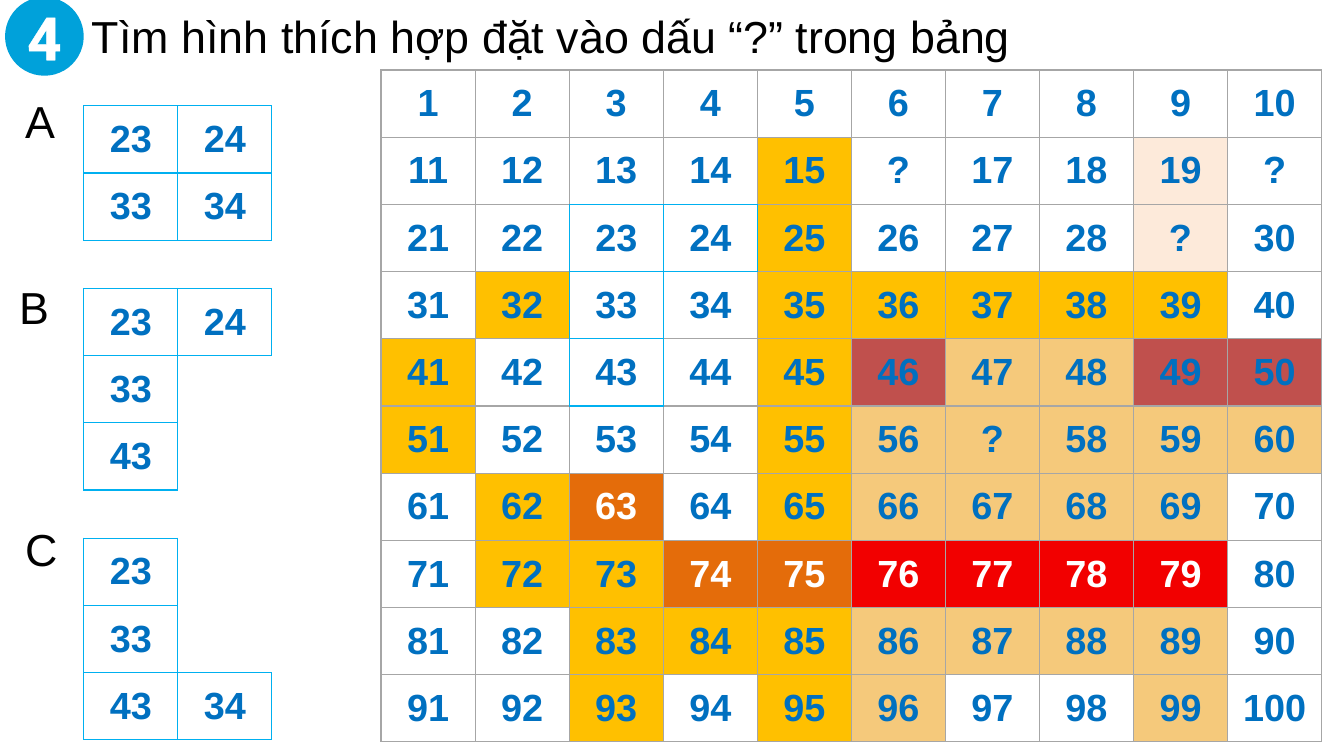
from lxml import etree
from pptx import Presentation
from pptx import util as u
from pptx.dml.color import RGBColor
from pptx.enum import shapes, text
from pptx.oxml import ns

Pt = u.Pt
HUES = {
    "ink": "000000", "white": "FFFFFF", "blue": "0070C0", "badge": "00A1DA",
    "grid": "A6A6A6", "piece": "00B0F0",
    ".": "FFFFFF", "y": "FFC000", "p": "FDEADA", "r": "C0504D",
    "t": "F5C97B", "o": "E46C0A", "f": "F20000",
}
WIDE, HIGH = 67.2, 48
GAPS = {12, 13, 15, 18, 25, 28, 31, 32, 46, 19, 56}
MARKS = {16, 20, 29, 33, 57}
UNDER = {23, 24, 43}
TINTS = [
    "..........", "....y...p.", "....y...p.", ".y..yyyyy.", "y...yrttrr",
    "y...yttttt", ".yo.ytttt.", ".yyooffff.", "..yyytttt.", "..y.yt..t.",
]
SQUARE = ([["23", "24"], ["33", "34"]], ["..", ".."])
HOOK = ([["23", "24"], ["33", ""], ["43", ""]], ["..", ".-", ".-"])
FOOT = ([["23", ""], ["33", ""], ["43", "34"]], [".-", ".-", ".."])


def hue(name):
    return RGBColor.from_string(HUES[name])


def style(para, size, tone, face="Arial", bold=False, align=text.PP_ALIGN.CENTER):
    para.alignment = align
    font = para.font
    font.size, font.name, font.bold = Pt(size), face, bold
    font.color.rgb = hue(tone)


def pad(box):
    box.margin_left = box.margin_right = Pt(9.6)
    box.margin_top = box.margin_bottom = Pt(4.8)
    box.vertical_anchor = text.MSO_ANCHOR.MIDDLE


def write(shape, words):
    frame = shape.text_frame
    frame.word_wrap = True
    frame.auto_size = text.MSO_AUTO_SIZE.NONE
    pad(frame)
    frame.text = words
    style(frame.paragraphs[0], 32, "ink", align=text.PP_ALIGN.JUSTIFY)


def edge(cell, side, tone):
    props = cell._tc.get_or_add_tcPr()
    line = etree.SubElement(props, ns.qn("a:" + side), w=str(Pt(1)))
    if tone:
        fill = etree.SubElement(line, ns.qn("a:solidFill"))
        etree.SubElement(fill, ns.qn("a:srgbClr"), val=HUES[tone])
    else:
        etree.SubElement(line, ns.qn("a:noFill"))


def board(slide, left, top, words, tints, tone):
    rows, cols = len(words), len(words[0])
    table = slide.shapes.add_table(
        rows, cols, Pt(left), Pt(top), Pt(WIDE * cols), Pt(HIGH * rows)).table
    table.first_row = table.horz_banding = False
    for col in table.columns:
        col.width = Pt(WIDE)
    for row in table.rows:
        row.height = Pt(HIGH)

    def full(r, c):
        return 0 <= r < rows and 0 <= c < cols and words[r][c] != ""

    for r in range(rows):
        for c in range(cols):
            cell, tint = table.cell(r, c), tints[r][c]
            pad(cell)
            cell.text = words[r][c]
            style(cell.text_frame.paragraphs[0], 27,
                  "white" if tint in "of" else "blue", bold=True)
            for side, down, over in (("lnL", 0, -1), ("lnR", 0, 1),
                                     ("lnT", -1, 0), ("lnB", 1, 0)):
                drawn = full(r, c) or full(r + down, c + over)
                edge(cell, side, tone if drawn else None)
            if tint == "-":
                cell.fill.background()
            else:
                cell.fill.solid()
                cell.fill.fore_color.rgb = hue(tint)


def header(slide, left, top):
    title = slide.shapes.title
    title.left, title.top = Pt(left + 52.5), Pt(top - 17.3)
    title.width, title.height = Pt(828), Pt(90)
    write(title, "Tìm hình thích hợp đặt vào dấu “?” trong bảng")
    badge = slide.shapes.add_shape(
        shapes.MSO_SHAPE.OVAL, Pt(left), Pt(top), Pt(56.2), Pt(56.2))
    badge.shadow.inherit = False
    badge.fill.solid()
    badge.fill.fore_color.rgb = hue("badge")
    badge.line.fill.background()
    frame = badge.text_frame
    frame.vertical_anchor = text.MSO_ANCHOR.MIDDLE
    para = frame.paragraphs[0]
    run = para.add_run()
    run.text = "4"
    style(para, 42.7, "white", "Roboto", True)
    line = etree.SubElement(run._r.get_or_add_rPr(), ns.qn("a:ln"), w=str(Pt(1.45)))
    fill = etree.SubElement(line, ns.qn("a:solidFill"))
    etree.SubElement(fill, ns.qn("a:srgbClr"), val=HUES["white"])


def entry(num):
    if num in UNDER:
        return ""
    return "?" if num in MARKS else str(num)


def chart(slide, left, top):
    words = [[entry(10 * r + c + 1) for c in range(10)] for r in range(10)]
    board(slide, left, top, words, TINTS, "grid")
    board(slide, left + 2 * WIDE, top + 2 * HIGH, *HOOK, "piece")


def choice(slide, left, top, name, shift, lift, piece):
    board(slide, left, top, *piece, "piece")
    label = slide.shapes.add_textbox(
        Pt(left - shift), Pt(top - lift), Pt(67.7), Pt(90))
    write(label, name)


def main():
    deck = Presentation()
    deck.slide_width, deck.slide_height = Pt(960), Pt(540)
    slide = deck.slides.add_slide(deck.slide_layouts[5])
    header(slide, 3.6, -2.1)
    chart(slide, 272.2, 50)
    choice(slide, 59.8, 75.6, "A", 51.2, 34.6, SQUARE)
    choice(slide, 59.8, 206, "B", 55.5, 31.8, HOOK)
    choice(slide, 59.8, 384.5, "C", 51.2, 37.5, FOOT)
    deck.save("out.pptx")


if __name__ == "__main__":
    main()
